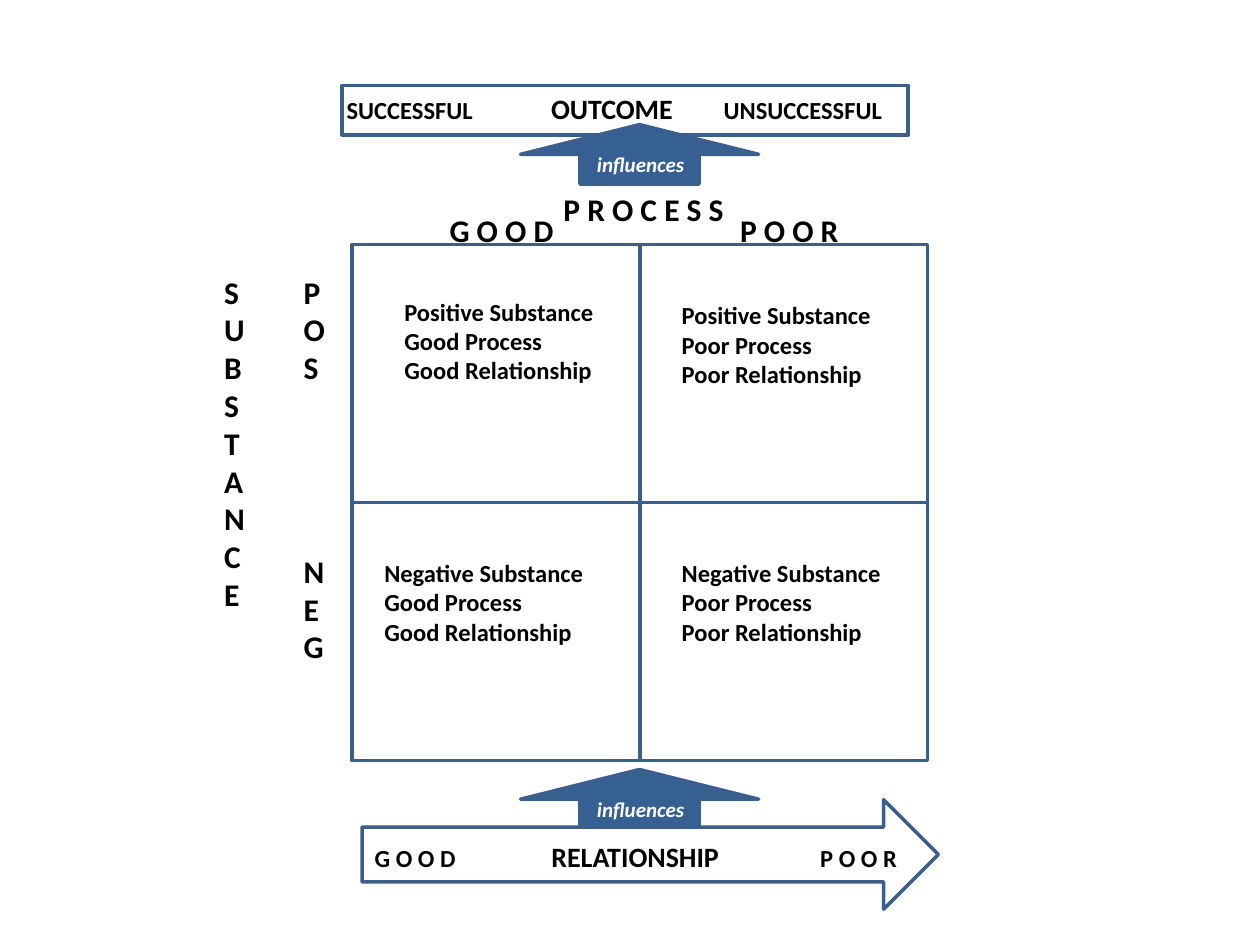
from dataclasses import dataclass
from typing import Any, NamedTuple

import lxml.etree
import pptx
import pptx.dml.color
import pptx.enum.shapes
import pptx.enum.text
import pptx.oxml.ns
import pptx.util

Pt = pptx.util.Pt
Shape = pptx.enum.shapes.MSO_SHAPE
Align = pptx.enum.text.PP_ALIGN


@dataclass(frozen=True)
class Theme:
    font: str = "Calibri"
    black: str = "000000"
    white: str = "FFFFFF"
    arrow: str = "376092"
    outline: str = "3A5F8C"
    outline_width: float = 2
    heading: float = 18
    title: float = 16
    body: float = 14
    note: float = 12


THEME = Theme()


class Frame(NamedTuple):
    left: float
    top: float
    width: float
    height: float


class Span(NamedTuple):
    text: str
    size: float
    color: str = THEME.black
    italic: bool = False


class Label(NamedTuple):
    text: str
    frame: Frame


class Quadrant(NamedTuple):
    column: int
    row: int
    text_left: float
    text_top: float
    lines: tuple[str, ...]


# Grid of four quadrants
GRID_LEFT, GRID_TOP = 201.3, 139.8
CELL_WIDTH, CELL_HEIGHT = 164.4, 147.4
QUADRANTS = (
    Quadrant(0, 0, 224, 166, ("Positive Substance", "Good Process", "Good Relationship")),
    Quadrant(1, 0, 382.5, 168, ("Positive Substance", "Poor Process", "Poor Relationship")),
    Quadrant(0, 1, 212.5, 315.2, ("Negative Substance", "Good Process", "Good Relationship")),
    Quadrant(1, 1, 382.5, 315.2, ("Negative Substance", "Poor Process", "Poor Relationship")),
)

# Axis headings
ACROSS = (
    Label("P R O C E S S", Frame(203.3, 105.3, 329, 29)),
    Label("G O O D", Frame(213.1, 117, 147, 29)),
    Label("P O O R", Frame(360, 117, 182, 29)),
)
DOWN = (
    Label("SUBSTANCE", Frame(119.5, 150, 42, 273)),
    Label("POS", Frame(164.9, 150, 42, 108)),
    Label("NEG", Frame(164.9, 309.6, 42, 108)),
)


def set_format(target: Any, values: dict[str, Any]) -> None:
    for name, value in values.items():
        setattr(target, name, value)


def rgb(color: str) -> pptx.dml.color.RGBColor:
    return pptx.dml.color.RGBColor.from_string(color)


def points(frame: Frame) -> list[pptx.util.Length]:
    return [Pt(value) for value in frame]


def add_outline(page: Any, kind: Any, frame: Frame, fill: str = THEME.white) -> None:
    shape = page.shapes.add_shape(kind, *points(frame))
    shape.shadow.inherit = False
    shape.fill.solid()
    shape.fill.fore_color.rgb = rgb(fill)
    shape.line.color.rgb = rgb(THEME.outline)
    shape.line.width = Pt(THEME.outline_width)


def add_text(page: Any, frame: Frame, paras: list[list[Span]],
             align: Any = Align.LEFT, tabs: tuple[float, ...] = ()) -> Any:
    box = page.shapes.add_textbox(*points(frame))
    set_format(box.text_frame, {
        "word_wrap": True,
        "auto_size": pptx.enum.text.MSO_AUTO_SIZE.SHAPE_TO_FIT_TEXT,
    })
    for index, spans in enumerate(paras):
        para = box.text_frame.paragraphs[0] if index == 0 else box.text_frame.add_paragraph()
        para.alignment = align
        if tabs:
            qn = pptx.oxml.ns.qn
            stops = lxml.etree.SubElement(para._p.get_or_add_pPr(), qn("a:tabLst"))
            for stop in tabs:
                lxml.etree.SubElement(stops, qn("a:tab"), pos=str(int(Pt(stop))), algn="l")
        for span in spans:
            run = para.add_run()
            run.text = span.text
            set_format(run.font, {"name": THEME.font, "size": Pt(span.size),
                                  "bold": True, "italic": span.italic})
            run.font.color.rgb = rgb(span.color)
    return box


def add_stacked_text(page: Any, label: Label) -> None:
    box = add_text(page, label.frame, [[Span(label.text, THEME.heading)]])
    set_format(box.text_frame, {"margin_left": Pt(8.64), "margin_top": Pt(5.76),
                                "margin_right": Pt(7.2), "margin_bottom": Pt(3.6)})
    box.text_frame._txBody.bodyPr.set("vert", "wordArtVert")


def add_influence(page: Any, top: float) -> None:
    add_outline(page, Shape.UP_ARROW, Frame(297.4, top, 136.1, 34), THEME.arrow)
    add_text(page, Frame(334, top + 12, 68, 21.6),
             [[Span("influences", THEME.note, THEME.white, True)]])


def add_scale(page: Any, frame: Frame, words: tuple[str, str, str],
              tabs: tuple[float, float]) -> None:
    low, title, high = words
    add_text(page, frame, [[Span(low + "\t", THEME.body), Span(title + "\t", THEME.title),
                            Span(high, THEME.body)]], tabs=tabs)


def main() -> None:
    deck = pptx.Presentation()
    set_format(deck, {"slide_width": Pt(720), "slide_height": Pt(540)})
    page = deck.slides.add_slide(deck.slide_layouts[6])

    # Quadrants
    for quadrant in QUADRANTS:
        add_outline(page, Shape.RECTANGLE,
                    Frame(GRID_LEFT + quadrant.column * CELL_WIDTH,
                          GRID_TOP + quadrant.row * CELL_HEIGHT, CELL_WIDTH, CELL_HEIGHT))
        add_text(page, Frame(quadrant.text_left, quadrant.text_top, 136, 58.5),
                 [[Span(line, THEME.body)] for line in quadrant.lines])

    # Headings along the two axes
    for label in ACROSS:
        add_text(page, label.frame, [[Span(label.text, THEME.heading)]], Align.CENTER)
    for label in DOWN:
        add_stacked_text(page, label)

    # Relationship arrow below the grid
    add_influence(page, 439.7)
    add_outline(page, Shape.RIGHT_ARROW, Frame(206.9, 457, 329.3, 62.6))
    add_scale(page, Frame(207, 476, 323, 26.6),
              ("G O O D", "RELATIONSHIP", "P O O R"), (101, 254.6))

    # Outcome bar above the grid
    add_outline(page, Shape.RECTANGLE, Frame(195.5, 48.8, 323.4, 28.3))
    add_scale(page, Frame(191, 49, 326, 26.6),
              ("SUCCESSFUL", "OUTCOME", "UNSUCCESSFUL"), (116.8, 215.4))
    add_influence(page, 71.2)

    deck.save("out.pptx")


if __name__ == "__main__":
    main()
